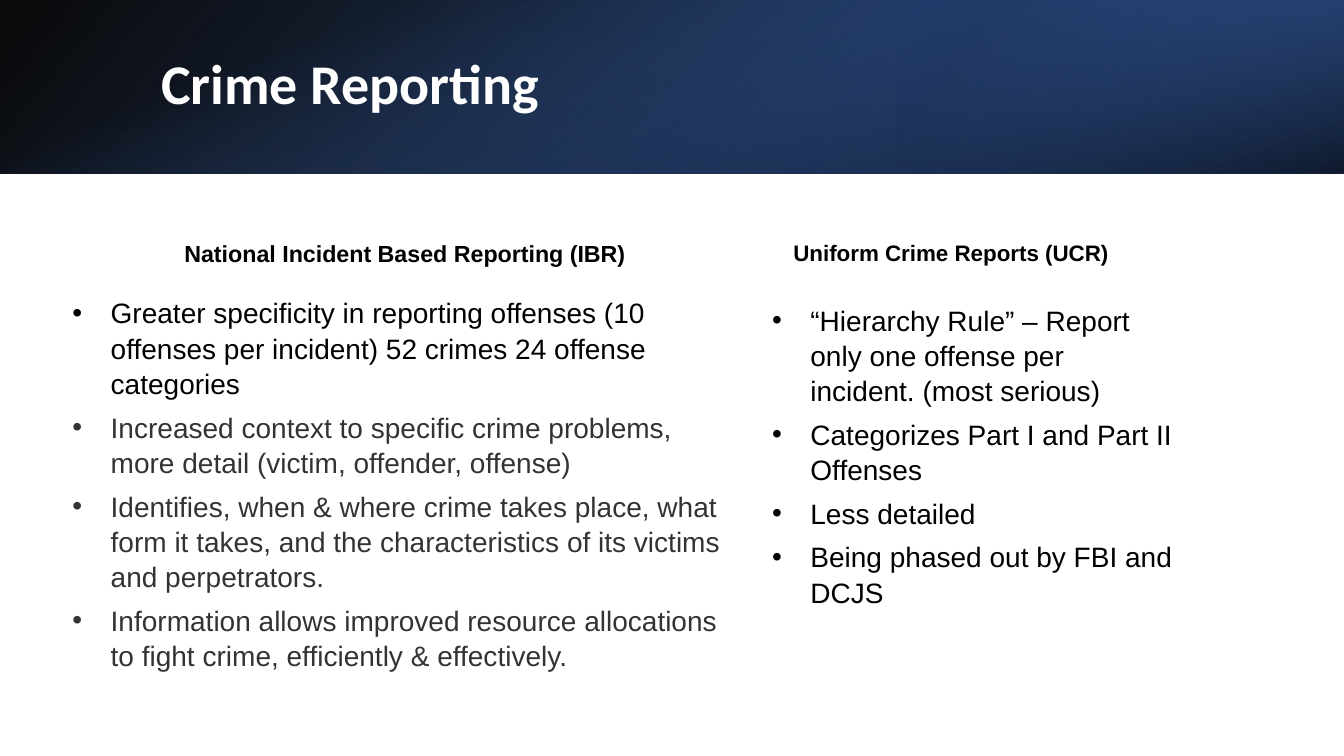
from lxml import etree
from pptx import Presentation
from pptx.dml.color import RGBColor
from pptx.enum.shapes import MSO_SHAPE
from pptx.enum.text import MSO_ANCHOR
from pptx.oxml import parse_xml
from pptx.oxml.ns import nsdecls, qn
from pptx.util import Inches, Pt

RECT = MSO_SHAPE.RECTANGLE
TOP, MIDDLE = MSO_ANCHOR.TOP, MSO_ANCHOR.MIDDLE
BLACK, GRAY, WHITE = "000000", "333333", "FFFFFF"
W, H, BANNER_H = 13.33, 7.5, 1.72
BULLET_INDENT = 0.38

TITLE = "Crime Reporting"
BANNER = [
    ((0, 0, W, BANNER_H), 0, True, 140,
     [(0, "000000", 96), (100, "2F5597", 100)]),
    ((W * 2 / 3, 0, W / 3, BANNER_H), 180, True, 320,
     [(19, "203864", 68), (100, "4472C4", 79)]),
    (((W - BANNER_H) / 2, (BANNER_H - W) / 2, BANNER_H, W), 90, False, 340,
     [(23, "4472C4", 0), (99, "000000", 74)]),
]
COLUMNS = [
    {"head": "National Incident Based Reporting (IBR)", "head_size": 16.6,
     "head_at": (1.73, 2.31, 4.81, 0.56), "list_at": (0.62, 2.87, 6.83, 4.25),
     "items": [
         ("Greater specificity in reporting offenses (10 offenses per incident) "
          "52 crimes 24 offense categories", BLACK),
         ("Increased context to specific crime problems, more detail "
          "(victim, offender, offense)", GRAY),
         ("Identifies, when & where crime takes place, what form it takes, and the "
          "characteristics of its victims and perpetrators.", GRAY),
         ("Information allows improved resource allocations to fight crime, "
          "efficiently & effectively.", GRAY)]},
    {"head": "Uniform Crime Reports (UCR)", "head_size": 16,
     "head_at": (7.77, 2.31, 4.08, 0.56), "list_at": (7.56, 2.94, 4.17, 3.99),
     "items": [
         ("“Hierarchy Rule” – Report only one offense per incident. (most serious)", BLACK),
         ("Categorizes Part I and Part II Offenses", BLACK),
         ("Less detailed", BLACK),
         ("Being phased out by FBI and DCJS", BLACK)]},
]


def rgb(color):
    return RGBColor.from_string(color)


def add_gradient(s, at, rotation, flip, angle, stops):
    sp = s.shapes.add_shape(RECT, *map(Inches, at))
    sp.shadow.inherit = False
    sp.line.fill.background()
    sp.rotation = rotation
    props = sp._element.spPr
    if flip:
        props.find(qn("a:xfrm")).set("flipH", "1")
    stop_xml = "".join(
        f'<a:gs pos="{pos * 1000}"><a:srgbClr val="{color}">'
        f'<a:alpha val="{alpha * 1000}"/></a:srgbClr></a:gs>'
        for pos, color, alpha in stops)
    props.find(qn("a:prstGeom")).addnext(parse_xml(
        f'<a:gradFill {nsdecls("a")} rotWithShape="1"><a:gsLst>{stop_xml}</a:gsLst>'
        f'<a:lin ang="{angle * 60000}" scaled="0"/></a:gradFill>'))


def add_text(s, at, items, size, font="Arial", bold=False, bullets=False,
             spacing=1.05, after=6, anchor=TOP):
    tf = s.shapes.add_textbox(*map(Inches, at)).text_frame
    tf.word_wrap = True
    tf.vertical_anchor = anchor
    for i, (text, color) in enumerate(items):
        p = tf.paragraphs[0] if i == 0 else tf.add_paragraph()
        p.text = text
        p.line_spacing = spacing
        p.space_after = Pt(after)
        r = p.runs[0]
        r.font.size, r.font.name, r.font.bold = Pt(size), font, bold
        r.font.color.rgb = rgb(color)
        if bullets:
            pr = p._p.get_or_add_pPr()
            pr.set("marL", str(Inches(BULLET_INDENT)))
            pr.set("indent", str(-Inches(BULLET_INDENT)))
            etree.SubElement(pr, qn("a:buFont")).set("typeface", "Arial")
            etree.SubElement(pr, qn("a:buChar")).set("char", "•")


def main():
    prs = Presentation()
    prs.slide_width, prs.slide_height = Inches(W), Inches(H)
    s = prs.slides.add_slide(prs.slide_layouts[6])
    s.background.fill.solid()
    s.background.fill.fore_color.rgb = rgb(WHITE)
    for layer in BANNER:
        add_gradient(s, *layer)
    add_text(s, (1.5, 0.38, 10.98, 0.96), [(TITLE, WHITE)], 40, "Calibri", True,
             spacing=0.9, after=0, anchor=MIDDLE)
    for col in COLUMNS:
        add_text(s, col["head_at"], [(col["head"], BLACK)], col["head_size"], bold=True)
        add_text(s, col["list_at"], col["items"], 20, bullets=True)
    prs.save("out.pptx")


if __name__ == "__main__":
    main()
